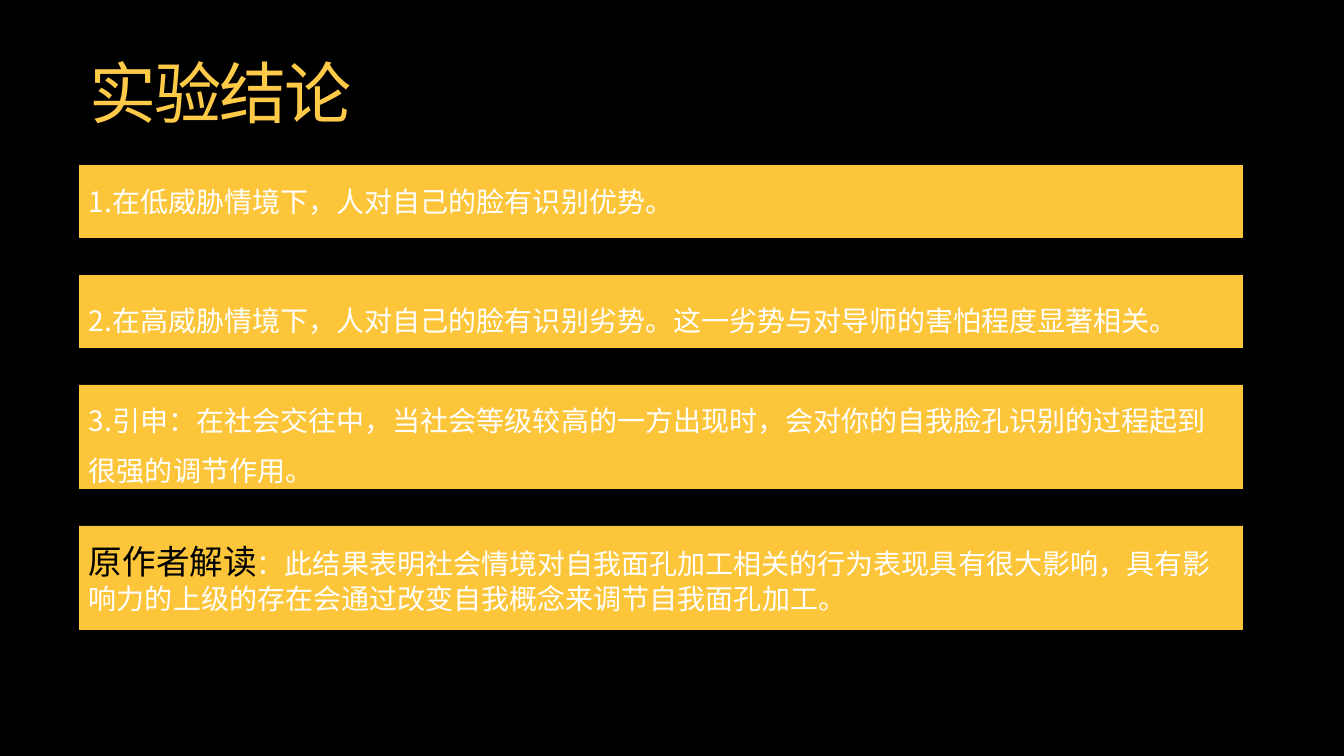
import lxml.etree
import pptx
import pptx.dml.color
import pptx.enum.shapes
import pptx.enum.text
import pptx.oxml.ns
import pptx.util

BLACK = pptx.dml.color.RGBColor(0x00, 0x00, 0x00)
WHITE = pptx.dml.color.RGBColor(0xFF, 0xFF, 0xFF)
AMBER = pptx.dml.color.RGBColor(0xFD, 0xC5, 0x39)
TITLE_AMBER = pptx.dml.color.RGBColor(0xFE, 0xCA, 0x48)
FONT = "Noto Sans CJK SC"
EMU_PER_PX = 914400 / 100.8
BAR_GAP = 37

CONCLUSIONS = [
    (73, 1.0, [("1.在低威胁情境下，人对自己的脸有识别优势。", 20, WHITE)]),
    (73, 1.5, [("2.在高威胁情境下，人对自己的脸有识别劣势。这一劣势与对导师的害怕程度显著相关。", 20, WHITE)]),
    (104, 1.5, [("3.引申：在社会交往中，当社会等级较高的一方出现时，会对你的自我脸孔识别的过程起到很强的调节作用。", 20, WHITE)]),
    (104, 1.0, [
        ("原作者解读", 24, BLACK),
        ("：此结果表明社会情境对自我面孔加工相关的行为表现具有很大影响，具有影响力的上级的存在会通过改变自我概念来调节自我面孔加工。", 20, WHITE),
    ]),
]


def px(length):
    """Turn pixels into EMU."""
    return pptx.util.Emu(round(length * EMU_PER_PX))


def add_text(paragraph, text, size, color, spacing=None):
    """Add a formatted run to a paragraph."""
    run = paragraph.add_run()
    run.text = text
    run.font.name = FONT
    run.font.size = pptx.util.Pt(size)
    run.font.color.rgb = color
    properties = run.font._element
    properties.set("lang", "zh-CN")
    if spacing is not None:
        properties.set("spc", str(round(spacing * 100)))
    east_asian = lxml.etree.SubElement(properties, pptx.oxml.ns.qn("a:ea"))
    east_asian.set("typeface", FONT)


def format_frame(frame, anchor, line_spacing):
    """Set wrapping, anchor and line spacing, and return the first paragraph."""
    frame.word_wrap = True
    frame.auto_size = pptx.enum.text.MSO_AUTO_SIZE.NONE
    frame.vertical_anchor = anchor
    paragraph = frame.paragraphs[0]
    paragraph.alignment = pptx.enum.text.PP_ALIGN.LEFT
    paragraph.line_spacing = line_spacing
    paragraph.space_before = pptx.util.Pt(0)
    return paragraph


def place_title(slide, left, top, width, height):
    """Move the title placeholder into its box and fill it."""
    title = slide.shapes.title
    title.left, title.top, title.width, title.height = map(px, (left, top, width, height))
    paragraph = format_frame(title.text_frame, pptx.enum.text.MSO_ANCHOR.TOP, 0.9)
    add_text(paragraph, "实验结论", size=48, color=TITLE_AMBER, spacing=-1.5)


def add_conclusions(slide, left, top, width):
    """Stack the conclusion bars downwards from the given corner."""
    for height, line_spacing, runs in CONCLUSIONS:
        bar = slide.shapes.add_shape(
            pptx.enum.shapes.MSO_SHAPE.RECTANGLE, px(left), px(top), px(width), px(height))
        bar.shadow.inherit = False
        bar.fill.solid()
        bar.fill.fore_color.rgb = AMBER
        bar.line.fill.background()
        paragraph = format_frame(bar.text_frame, pptx.enum.text.MSO_ANCHOR.MIDDLE, line_spacing)
        for text, size, color in runs:
            add_text(paragraph, text, size=size, color=color)
        top += height + BAR_GAP


def main():
    """Build the slide and save it."""
    presentation = pptx.Presentation()
    presentation.slide_width = px(1344)
    presentation.slide_height = px(756)
    slide = presentation.slides.add_slide(presentation.slide_layouts[5])
    slide.background.fill.solid()
    slide.background.fill.fore_color.rgb = BLACK
    place_title(slide, left=79, top=55, width=512, height=88)
    add_conclusions(slide, left=79, top=165, width=1164)
    presentation.save("out.pptx")


if __name__ == "__main__":
    main()
